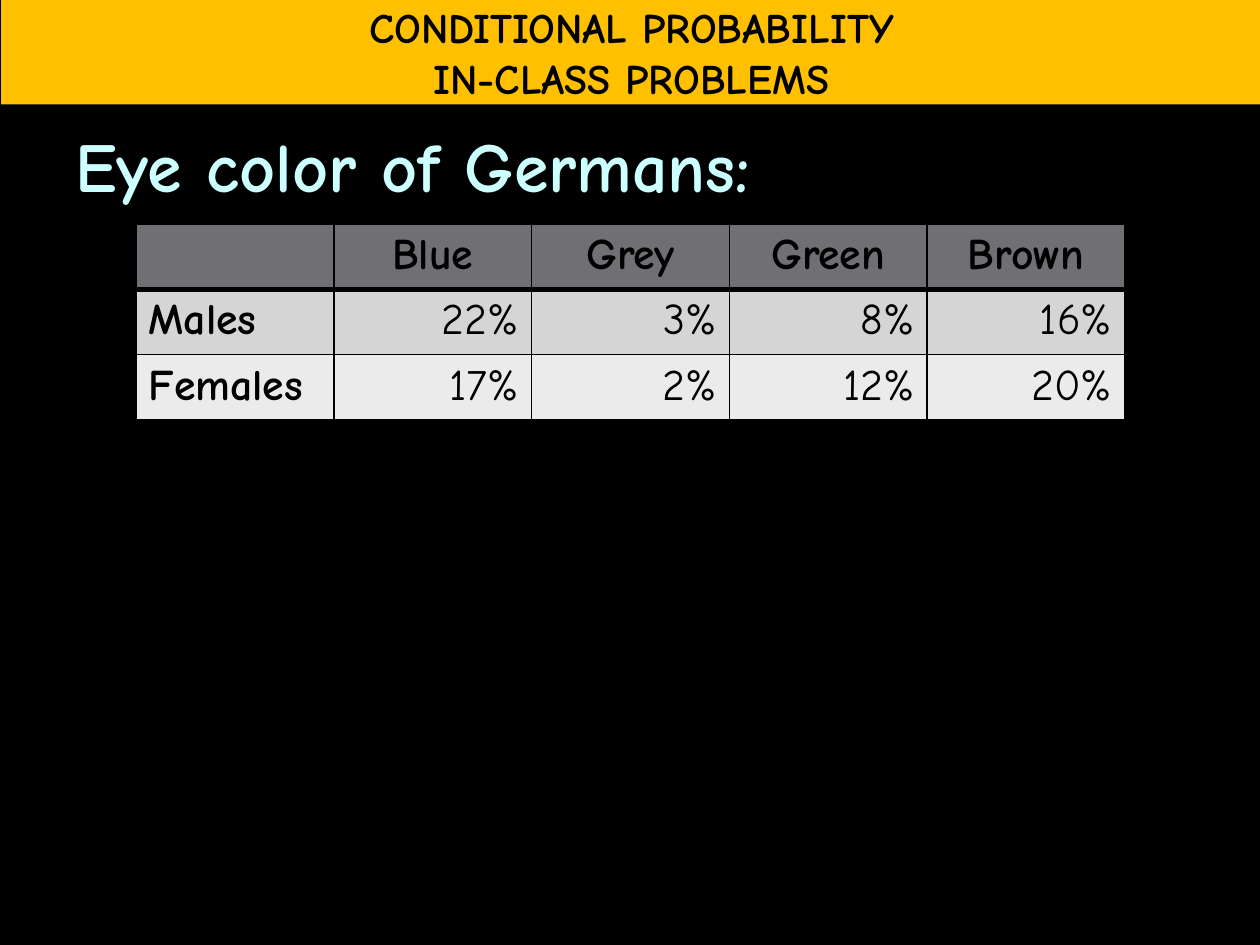
from pptx import Presentation
from pptx.dml.color import RGBColor
from pptx.enum.shapes import MSO_SHAPE
from pptx.enum.text import MSO_ANCHOR, PP_ALIGN
from pptx.oxml.ns import qn
from pptx.util import Inches, Pt
from lxml.etree import SubElement

COLORS = {
    "background": "000000",
    "banner": "FFC000",
    "heading": "CCFFFF",
    "ink": "000000",
    "header": "6F6F74",
    "males": "D5D5D6",
    "females": "EBEBEB",
}


class SlideBuilder:
    font_name = "Comic Neue"

    def __init__(self, slide):
        self.slide = slide
        self.paint(slide.background.fill, "background")

    def paint(self, fill, color):
        fill.solid()
        fill.fore_color.rgb = RGBColor.from_string(COLORS[color])

    def style_text(self, text_frame, size, color, bold=True, align=PP_ALIGN.LEFT):
        for paragraph in text_frame.paragraphs:
            paragraph.alignment = align
            for run in paragraph.runs:
                run.font.name = self.font_name
                run.font.size = Pt(size)
                run.font.bold = bold
                run.font.color.rgb = RGBColor.from_string(COLORS[color])

    def banner(self, text, left, top, width, height):
        shape = self.slide.shapes.add_shape(
            MSO_SHAPE.RECTANGLE, Inches(left), Inches(top), Inches(width), Inches(height))
        shape.shadow.inherit = False
        self.paint(shape.fill, "banner")
        shape.line.fill.background()
        text_frame = shape.text_frame
        text_frame.text = text
        text_frame.word_wrap = False
        text_frame.vertical_anchor = MSO_ANCHOR.MIDDLE
        self.style_text(text_frame, 24, "ink", align=PP_ALIGN.CENTER)

    def heading(self, text, left, top, width, height):
        shape = self.slide.shapes.add_textbox(
            Inches(left), Inches(top), Inches(width), Inches(height))
        text_frame = shape.text_frame
        text_frame.text = text
        text_frame.word_wrap = True
        text_frame.paragraphs[0].space_before = Pt(8)
        self.style_text(text_frame, 40, "heading")

    def border(self, cell, side, width):
        properties = cell._tc.get_or_add_tcPr()
        line = SubElement(properties, qn(f"a:ln{side}"), w=str(Pt(width)))
        fill = SubElement(line, qn("a:solidFill"))
        SubElement(fill, qn("a:srgbClr"), val=COLORS["ink"])

    def table(self, rows, fills, left, top, column_width, row_height):
        row_count, column_count = len(rows), len(rows[0])
        table = self.slide.shapes.add_table(
            row_count, column_count, Inches(left), Inches(top),
            Inches(column_width * column_count), Inches(row_height * row_count)).table
        for row_index, (values, fill) in enumerate(zip(rows, fills)):
            for column_index, value in enumerate(values):
                cell = table.cell(row_index, column_index)
                cell.text_frame.text = value
                is_header, is_label = row_index == 0, column_index == 0
                align = PP_ALIGN.RIGHT
                if is_header:
                    align = PP_ALIGN.CENTER
                elif is_label:
                    align = PP_ALIGN.LEFT
                self.style_text(cell.text_frame, 25, "ink", is_header or is_label, align)
                widths = {"L": 1, "R": 1, "T": 3 if row_index == 1 else 1,
                          "B": 3 if is_header else 1}
                for side, width in widths.items():
                    self.border(cell, side, width)
                self.paint(cell.fill, fill)


def main():
    presentation = Presentation()
    presentation.slide_width = Inches(10)
    presentation.slide_height = Inches(7.5)
    slide = presentation.slides.add_slide(presentation.slide_layouts[6])
    builder = SlideBuilder(slide)
    builder.heading("Eye color of Germans:", 0.5, 0.92, 9, 6.17)
    builder.banner("CONDITIONAL PROBABILITY\nIN-CLASS PROBLEMS", 0.01, 0, 10, 0.83)
    eye_colors = [
        ["", "Blue", "Grey", "Green", "Brown"],
        ["Males", "22%", "3%", "8%", "16%"],
        ["Females", "17%", "2%", "12%", "20%"],
    ]
    builder.table(eye_colors, ["header", "males", "females"], 1.08, 1.78, 1.57, 0.5)
    presentation.save("out.pptx")


if __name__ == "__main__":
    main()
